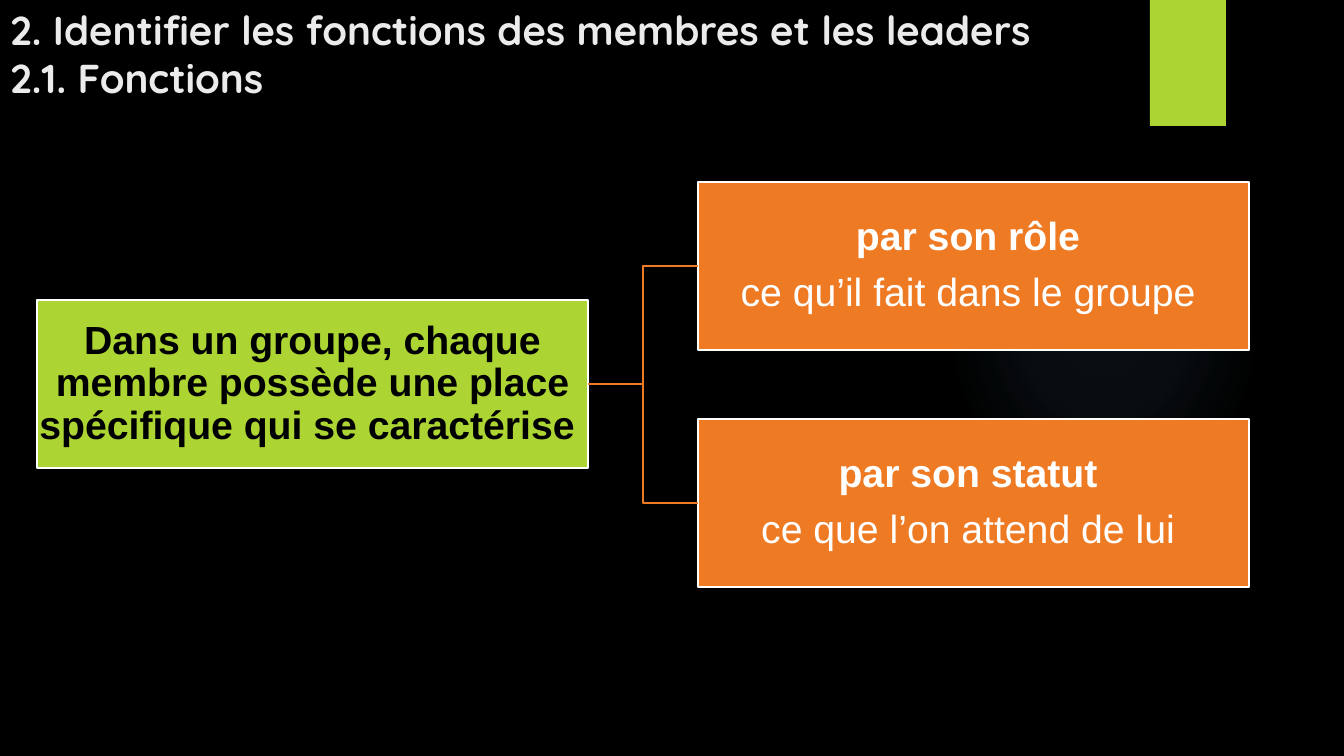
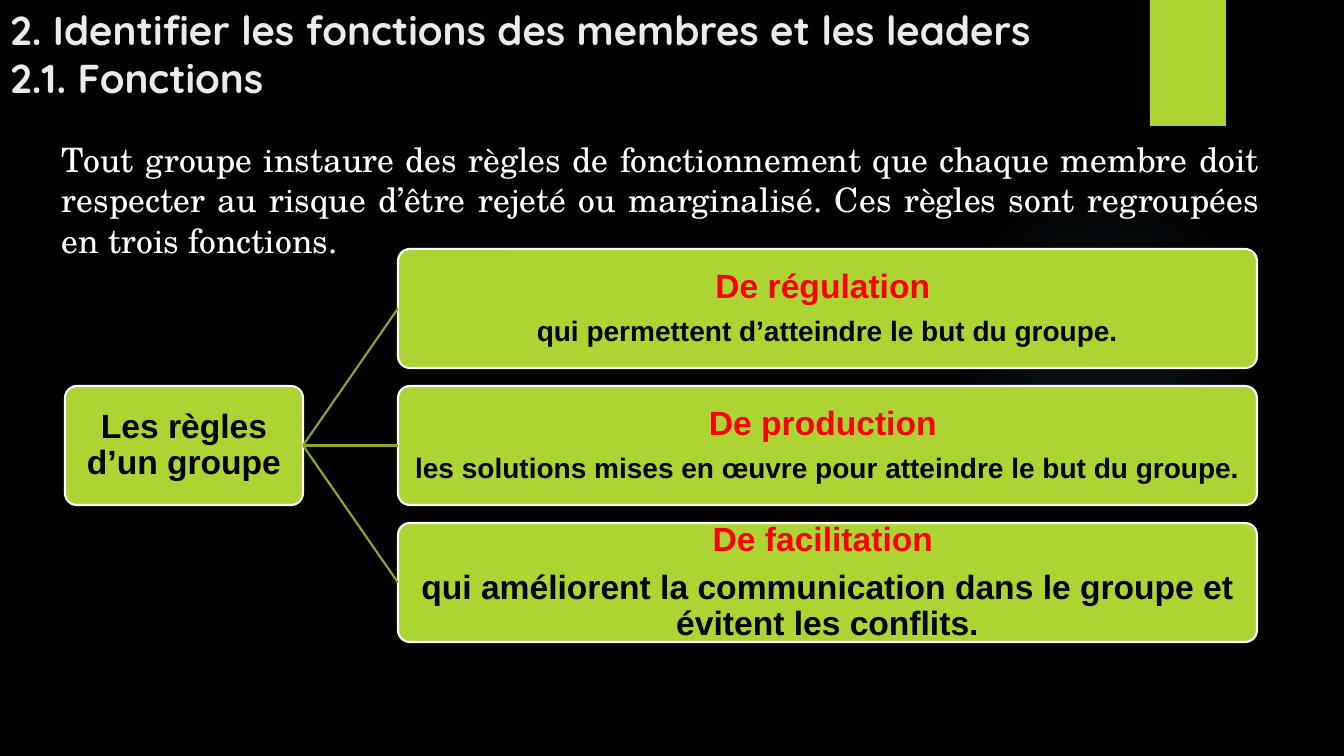
from lxml import etree
from pptx import Presentation
from pptx.dml.color import RGBColor
from pptx.enum.shapes import MSO_CONNECTOR as Link, MSO_SHAPE as Shape
from pptx.enum.text import MSO_ANCHOR as Anchor, MSO_AUTO_SIZE as Fit, PP_ALIGN as Align
from pptx.oxml import parse_xml
from pptx.oxml.ns import nsdecls, qn
from pptx.util import Emu, Pt

PX = 914400 / 100.8
HEX = {
    "back": "000000", "title": "EBEBEB", "lime": "ACD433", "orange": "EF7A24",
    "olive": "8AAA29", "red": "FF0000", "white": "FFFFFF", "black": "000000",
    "glow": "7AC4F0",
}
TITLE = ["2. Identifier les fonctions des membres et les leaders", "2.1. Fonctions"]
RIGHT, LEFT = 3, 1


def px(*vals):
    return [Emu(round(v * PX)) for v in vals]


def rgb(name):
    return RGBColor.from_string(HEX[name])


def add_run(par, text, size, color, font="Arial", bold=True):
    run = par.add_run()
    run.text = text
    run.font.name, run.font.size, run.font.bold = font, Pt(size), bold
    run.font.color.rgb = rgb(color)


# Shared parts
def add_glow(slide):
    disc = slide.shapes.add_shape(Shape.OVAL, *px(948, 184, 311, 311))
    disc.shadow.inherit = False
    disc.line.fill.background()
    stops = "".join(
        f'<a:gs pos="{pos}000"><a:srgbClr val="{HEX["glow"]}">'
        f'<a:alpha val="{alpha}000"/></a:srgbClr></a:gs>'
        for pos, alpha in ((0, 7), (36, 6), (69, 0)))
    fade = parse_xml(
        f'<a:gradFill {nsdecls("a")} rotWithShape="1"><a:gsLst>{stops}</a:gsLst>'
        '<a:path path="circle"><a:fillToRect l="50000" t="50000" r="50000" b="50000"/>'
        '</a:path></a:gradFill>')
    disc._element.spPr.find(qn("a:prstGeom")).addnext(fade)


def add_band(slide):
    band = slide.shapes.add_shape(Shape.RECTANGLE, *px(1150, 0, 76, 126))
    band.shadow.inherit = False
    band.fill.solid()
    band.fill.fore_color.rgb = rgb("lime")
    band.line.fill.background()


def set_title(slide):
    title = slide.shapes.title
    title.left, title.top, title.width, title.height = px(0, 0, 1193, 107)
    frame = title.text_frame
    frame.auto_size, frame.vertical_anchor = Fit.NONE, Anchor.BOTTOM
    par = frame.paragraphs[0]
    par.alignment = Align.LEFT
    for i, line in enumerate(TITLE):
        if i:
            par.add_line_break()
        add_run(par, line, 28.8, "title", "Quicksand")


def new_slide(prs):
    slide = prs.slides.add_slide(prs.slide_layouts[5])
    add_glow(slide)
    add_band(slide)
    set_title(slide)
    return slide


# Diagram parts
def add_box(slide, kind, area, fill, lines):
    """Each line is (text, size, color, bold)."""
    box = slide.shapes.add_shape(kind, *px(*area))
    box.shadow.inherit = False
    if kind == Shape.ROUNDED_RECTANGLE:
        box.adjustments[0] = 0.1
    box.fill.solid()
    box.fill.fore_color.rgb = rgb(fill)
    box.line.color.rgb = rgb("white")
    box.line.width = Pt(1.5)
    frame = box.text_frame
    frame.word_wrap, frame.vertical_anchor = True, Anchor.MIDDLE
    frame.margin_left = frame.margin_right = px(2)[0]
    frame.margin_top = frame.margin_bottom = px(2)[0]
    for i, (text, size, color, bold) in enumerate(lines):
        par = frame.add_paragraph() if i else frame.paragraphs[0]
        par.alignment, par.line_spacing = Align.CENTER, 0.9
        par.space_after = Pt(0.35 * size)
        add_run(par, text, size, color, bold=bold)
    return box


def add_link(slide, kind, start, end, color):
    link = slide.shapes.add_connector(kind, 0, 0, 0, 0)
    link.begin_connect(start, RIGHT)
    link.end_connect(end, LEFT)
    link.line.color.rgb = rgb(color)
    link.line.width = Pt(1.5)
    etree.SubElement(link._element.spPr, qn("a:effectLst"))


def add_tree(slide, kind, wire, root, kids, area, step, fill, ink):
    """Stack the kids from area downwards and link each one to the root."""
    left, top, width, height = area
    for i, lines in enumerate(kids):
        kid = add_box(slide, kind, (left, top + i * step, width, height), fill, lines)
        add_link(slide, wire, root, kid, ink)


def add_text(slide, area, text):
    frame = slide.shapes.add_textbox(*px(*area)).text_frame
    frame.word_wrap = True
    par = frame.paragraphs[0]
    par.alignment = Align.JUSTIFY
    add_run(par, text, 24, "white", "TeX Gyre Schola", False)


# Slides
def place_slide(prs):
    slide = new_slide(prs)
    kind = Shape.RECTANGLE
    root = add_box(slide, kind, (37, 300, 551, 168), "lime", [
        ("Dans un groupe, chaque membre possède une place spécifique "
         "qui se caractérise ", 28, "black", True)])
    pairs = [("par son rôle ", "ce qu’il fait dans le groupe "),
             ("par son statut ", "ce que l’on attend de lui ")]
    kids = [[(head, 28, "white", True), (body, 28, "white", False)]
            for head, body in pairs]
    add_tree(slide, kind, Link.ELBOW, root, kids, (698, 182, 551, 168), 237,
             "orange", "orange")


def rule_slide(prs):
    slide = new_slide(prs)
    add_text(slide, (52, 134, 1217, 132),
             "Tout groupe instaure des règles de fonctionnement que chaque membre "
             "doit respecter au risque d’être rejeté ou marginalisé. Ces règles "
             "sont regroupées en trois fonctions. ")
    kind = Shape.ROUNDED_RECTANGLE
    root = add_box(slide, kind, (65, 386, 238, 119), "lime",
                   [("Les règles d’un groupe", 24, "black", True)])
    rules = [
        ("De régulation ", "qui permettent d’atteindre le but du groupe.", 20),
        ("De production ",
         "les solutions mises en œuvre pour atteindre le but du groupe.", 20),
        ("De facilitation ",
         "qui améliorent la communication dans le groupe et évitent les conflits.", 24),
    ]
    kids = [[(head, 24, "red", True), (body, size, "black", True)]
            for head, body, size in rules]
    add_tree(slide, kind, Link.STRAIGHT, root, kids, (398, 249, 859, 119), 137,
             "lime", "olive")


def main():
    prs = Presentation()
    prs.slide_width, prs.slide_height = px(1344, 756)
    back = prs.slide_master.background.fill
    back.solid()
    back.fore_color.rgb = rgb("back")
    place_slide(prs)
    rule_slide(prs)
    prs.save("out.pptx")


if __name__ == "__main__":
    main()
